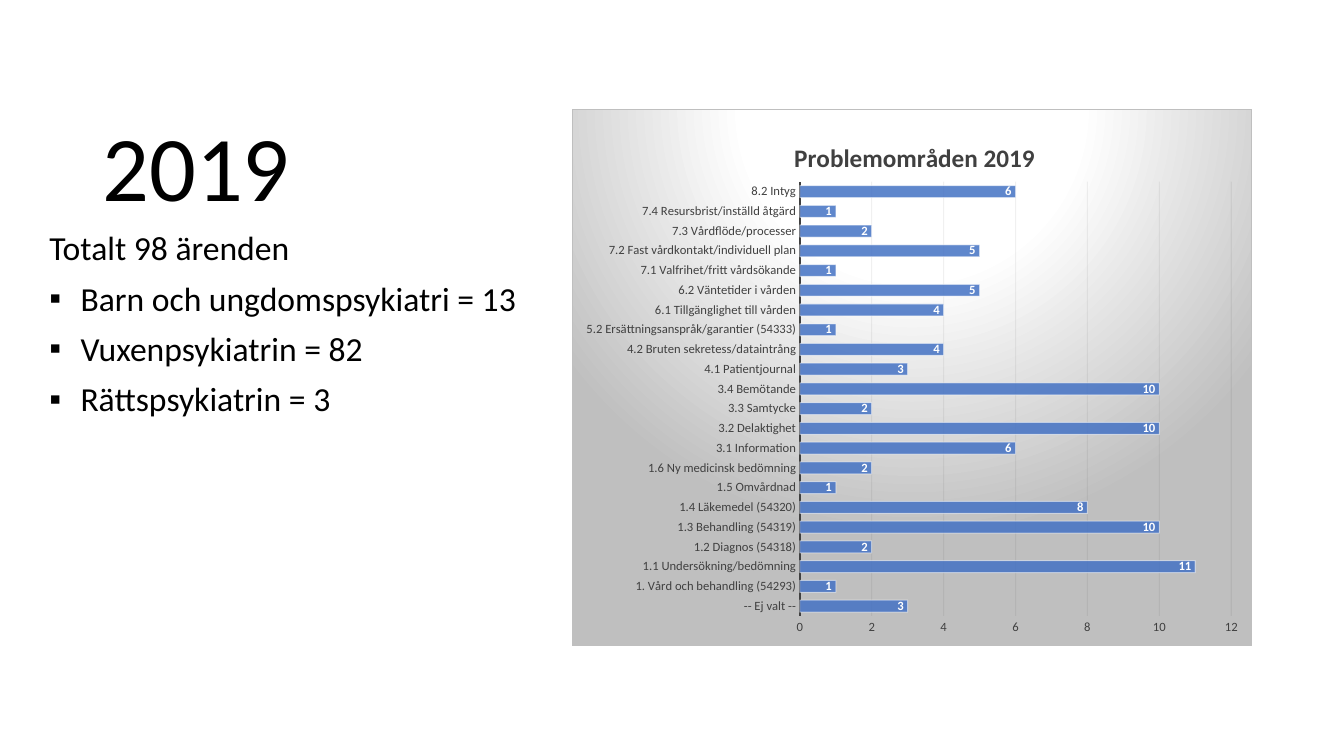
from dataclasses import dataclass

from lxml import etree
from pptx import Presentation
from pptx import util as u
from pptx.chart import data as chart_data
from pptx.dml import color
from pptx.enum import chart as charts, text
from pptx.oxml import ns, parse_xml

COLORS = {"black": "000000", "white": "FFFFFF", "dark": "404040", "grid": "0D0D0D",
          "bar": "4472C4", "grey": "BFBFBF"}
FONT = "Calibri"


@dataclass
class Line:
    words: str
    size: float = 24
    bullet: bool = False
    before: float = 10


@dataclass
class TextBlock:
    left: float
    top: float
    width: float
    height: float
    anchor: text.MSO_ANCHOR
    lines: list[Line]


BLOCKS = [
    TextBlock(0.92, 0.5, 4.3, 1.75, text.MSO_ANCHOR.BOTTOM, [Line("2019", 66, before=0)]),
    TextBlock(0.39, 2.25, 5.11, 4.17, text.MSO_ANCHOR.TOP, [
        Line("Totalt 98 ärenden"),
        Line("Barn och ungdomspsykiatri = 13", bullet=True),
        Line("Vuxenpsykiatrin = 82", bullet=True),
        Line("Rättspsykiatrin = 3", bullet=True),
    ]),
]

CASES = {
    "-- Ej valt --": 3,
    "1. Vård och behandling (54293)": 1,
    "1.1 Undersökning/bedömning": 11,
    "1.2 Diagnos (54318)": 2,
    "1.3 Behandling (54319)": 10,
    "1.4 Läkemedel (54320)": 8,
    "1.5 Omvårdnad": 1,
    "1.6 Ny medicinsk bedömning": 2,
    "3.1 Information": 6,
    "3.2 Delaktighet": 10,
    "3.3 Samtycke": 2,
    "3.4 Bemötande": 10,
    "4.1 Patientjournal": 3,
    "4.2 Bruten sekretess/dataintrång": 4,
    "5.2 Ersättningsanspråk/garantier (54333)": 1,
    "6.1 Tillgänglighet till vården": 4,
    "6.2 Väntetider i vården": 5,
    "7.1 Valfrihet/fritt vårdsökande": 1,
    "7.2 Fast vårdkontakt/individuell plan": 5,
    "7.3 Vårdflöde/processer": 2,
    "7.4 Resursbrist/inställd åtgärd": 1,
    "8.2 Intyg": 6,
}


def rgb(name: str) -> color.RGBColor:
    return color.RGBColor.from_string(COLORS[name])


def style_font(font, size: float, name: str, bold: bool = False) -> None:
    font.name, font.size, font.bold = FONT, u.Pt(size), bold
    font.color.rgb = rgb(name)


def style_line(line, name: str, width: float = 0.75) -> None:
    line.color.rgb = rgb(name)
    line.width = u.Pt(width)


def set_alphas(element, *percents: int) -> None:
    """Give the colours inside an element their opacities, in order."""
    for tint, percent in zip(element.iter(ns.qn("a:srgbClr")), percents):
        etree.SubElement(tint, ns.qn("a:alpha"), val=str(percent * 1000))


def add_text(page, block: TextBlock) -> None:
    box = page.shapes.add_textbox(u.Inches(block.left), u.Inches(block.top),
                                  u.Inches(block.width), u.Inches(block.height))
    frame = box.text_frame
    frame.word_wrap = True
    frame.vertical_anchor = block.anchor
    for index, line in enumerate(block.lines):
        para = frame.add_paragraph() if index else frame.paragraphs[0]
        para.line_spacing = 0.9
        para.space_before = u.Pt(line.before)
        if line.bullet:
            props = para._p.get_or_add_pPr()
            props.set("marL", str(u.Inches(0.31)))
            props.set("indent", str(u.Inches(-0.31)))
            etree.SubElement(props, ns.qn("a:buFont"), typeface="Arial")
            etree.SubElement(props, ns.qn("a:buChar"), char="▪")
        span = para.add_run()
        span.text = line.words
        style_font(span.font, line.size, "black")


def layout_xml(inner: bool = False, **places: float):
    target = '<c:layoutTarget val="inner"/>' if inner else ""
    modes = "".join(f'<c:{key}Mode val="edge"/>' for key in "xy")
    values = "".join(f'<c:{key} val="{value}"/>' for key, value in places.items())
    return parse_xml(f'<c:layout {ns.nsdecls("c")}><c:manualLayout>{target}{modes}{values}'
                     '</c:manualLayout></c:layout>')


def set_layout(parent, layout, position: int) -> None:
    for old in parent.findall(ns.qn("c:layout")):
        parent.remove(old)
    parent.insert(position, layout)


def fill_chart_area(chart) -> None:
    stops = "".join(f'<a:gs pos="{place * 1000}"><a:srgbClr val="{COLORS[name]}"/></a:gs>'
                    for place, name in ((0, "white"), (39, "white"), (100, "grey")))
    area = parse_xml(
        f'<c:spPr {ns.nsdecls("c", "a")}><a:gradFill><a:gsLst>{stops}</a:gsLst>'
        '<a:path path="circle"><a:fillToRect l="50000" t="-80000" r="50000" b="180000"/>'
        f'</a:path></a:gradFill><a:ln w="{u.Pt(0.75)}"><a:solidFill>'
        f'<a:srgbClr val="{COLORS["grey"]}"/></a:solidFill></a:ln></c:spPr>')
    chart._chartSpace.find(ns.qn("c:chart")).addnext(area)


def add_case_chart(page) -> None:
    cases = chart_data.CategoryChartData()
    cases.categories = list(CASES)
    cases.add_series("Series 1", list(CASES.values()))
    chart = page.shapes.add_chart(charts.XL_CHART_TYPE.BAR_CLUSTERED, u.Inches(5.67),
                                  u.Inches(1.08), u.Inches(6.75), u.Inches(5.33), cases).chart
    style_font(chart.font, 10, "black")
    chart.has_legend = False
    fill_chart_area(chart)

    # Chart title
    chart.has_title = True
    span = chart.chart_title.text_frame.paragraphs[0].add_run()
    span.text = "Problemområden 2019"
    style_font(span.font, 18, "dark", bold=True)
    set_layout(chart.chart_title._element, layout_xml(x=0.32, y=0.05), 1)
    set_layout(chart._chartSpace.chart.plotArea,
               layout_xml(inner=True, x=0.335, y=0.135, w=0.635, h=0.81), 0)

    # Axes
    for axis in (chart.category_axis, chart.value_axis):
        axis.major_tick_mark = axis.minor_tick_mark = charts.XL_TICK_MARK.NONE
        style_font(axis.tick_labels.font, 9, "dark")
    style_line(chart.category_axis.format.line, "dark", 1.5)
    values = chart.value_axis
    values.minimum_scale, values.maximum_scale, values.major_unit = 0, 12, 2
    values.format.line.fill.background()
    values.has_major_gridlines = True
    style_line(values.major_gridlines.format.line, "grid")
    set_alphas(values._element.find(ns.qn("c:majorGridlines")), 6)

    # Bars and their values
    plot = chart.plots[0]
    plot.gap_width = 65
    plot.vary_by_categories = False
    series = plot.series[0]
    series.format.fill.solid()
    series.format.fill.fore_color.rgb = rgb("bar")
    style_line(series.format.line, "white")
    set_alphas(series._element.find(ns.qn("c:spPr")), 85, 50)
    labels = series.data_labels
    labels.show_value = True
    labels.position = charts.XL_LABEL_POSITION.INSIDE_END
    style_font(labels.font, 9, "white", bold=True)


def main() -> None:
    deck = Presentation()
    deck.slide_width, deck.slide_height = u.Inches(13.33), u.Inches(7.5)
    page = deck.slides.add_slide(deck.slide_layouts[6])
    for block in BLOCKS:
        add_text(page, block)
    add_case_chart(page)
    deck.save("out.pptx")


if __name__ == "__main__":
    main()
